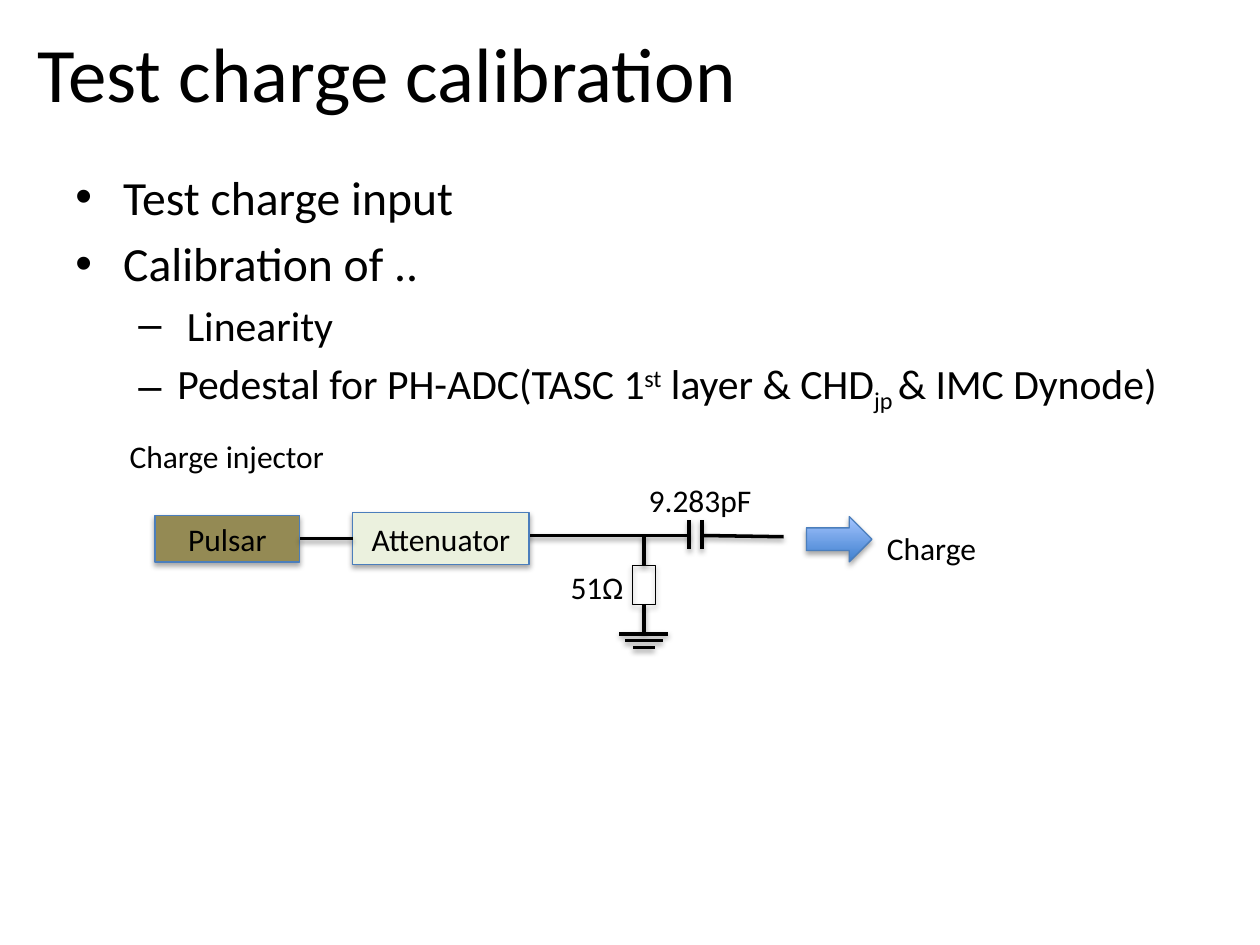
from lxml import etree
from pptx import Presentation
from pptx.dml.color import RGBColor
from pptx.enum.shapes import MSO_CONNECTOR, MSO_SHAPE as Shape
from pptx.enum.text import MSO_ANCHOR as Anchor, PP_ALIGN as Align
from pptx.oxml.ns import qn
from pptx.util import Inches, Pt

BLACK = RGBColor(0x00, 0x00, 0x00)
OLIVE = RGBColor(0x94, 0x8A, 0x54)
PALE_GREEN = RGBColor(0xEB, 0xF1, 0xDE)
EDGE_BLUE = RGBColor(0x4B, 0x7E, 0xBC)
DEEP_BLUE = RGBColor(0x3F, 0x80, 0xCE)
LIGHT_BLUE = RGBColor(0xA4, 0xC4, 0xFF)
FONT = "Calibri"
TOP, LEFT, BOTTOM, RIGHT = range(4)


def style_runs(p, size):
    for r in p.runs:
        r.font.name, r.font.size, r.font.color.rgb = FONT, Pt(size), BLACK


def add_text(shapes, text, x, y, w, h, size=18, anchor=Anchor.TOP):
    tf = shapes.add_textbox(Inches(x), Inches(y), Inches(w), Inches(h)).text_frame
    tf.word_wrap = True
    tf.vertical_anchor = anchor
    tf.text = text
    style_runs(tf.paragraphs[0], size)


def add_shadow(sp, alpha, distance):
    effects = etree.SubElement(sp._element.spPr, qn("a:effectLst"))
    shadow = etree.SubElement(effects, qn("a:outerShdw"), blurRad=str(Pt(3.1)),
                              dist=str(Pt(distance)), dir="5400000", rotWithShape="0")
    color = etree.SubElement(shadow, qn("a:srgbClr"), val=str(BLACK))
    etree.SubElement(color, qn("a:alpha"), val=str(alpha * 1000))


def add_part(shapes, kind, x, y, w, h, fill=None, edge=EDGE_BLUE, text=""):
    """Add a shadowed circuit part; a pair of fill colours makes a gradient."""
    sp = shapes.add_shape(kind, Inches(x), Inches(y), Inches(w), Inches(h))
    if fill is None:
        sp.fill.background()
    elif isinstance(fill, RGBColor):
        sp.fill.solid()
        sp.fill.fore_color.rgb = fill
    else:
        sp.fill.gradient()
        sp.fill.gradient_angle = 90
        for stop, color, position in zip(sp.fill.gradient_stops, fill, (0, 1)):
            stop.color.rgb, stop.position = color, position
    sp.line.color.rgb, sp.line.width = edge, Pt(0.75)
    add_shadow(sp, 35, 1.8)
    if text:
        tf = sp.text_frame
        tf.vertical_anchor = Anchor.MIDDLE
        tf.text = text
        tf.paragraphs[0].alignment = Align.CENTER
        style_runs(tf.paragraphs[0], 18)
    return sp


def add_wire(shapes, x1, y1, x2, y2):
    wire = shapes.add_connector(MSO_CONNECTOR.STRAIGHT, Inches(x1), Inches(y1),
                                Inches(x2), Inches(y2))
    wire.line.color.rgb, wire.line.width = BLACK, Pt(2)
    add_shadow(wire, 38, 1.6)
    return wire


def add_bullets(slide, x, y, w, h):
    tf = slide.shapes.add_textbox(Inches(x), Inches(y), Inches(w), Inches(h)).text_frame
    tf.word_wrap = True
    # Size, bullet, left margin and hanging indent of each level
    levels = ((27.2, "•", 0.38, 0.38), (23.8, "–", 0.81, 0.31))
    items = (
        (0, [("Test charge input", 0)]),
        (0, [("Calibration of ..", 0)]),
        (1, [(" Linearity", 0)]),
        (1, [("Pedestal for PH-ADC(TASC 1", 0), ("st", 30), (" layer & CHD", 0),
             ("jp ", -25), ("& IMC Dynode)", 0)]),
    )
    for i, (level, pieces) in enumerate(items):
        size, bullet, margin, hang = levels[level]
        p = tf.paragraphs[0] if i == 0 else tf.add_paragraph()
        p.level = level
        p.space_before = Pt(size * 0.2)
        for text, baseline in pieces:
            r = p.add_run()
            r.text = text
            if baseline:
                r.font._element.set("baseline", str(baseline * 1000))
        style_runs(p, size)
        pPr = p._p.get_or_add_pPr()
        pPr.set("marL", str(Inches(margin)))
        pPr.set("indent", str(-Inches(hang)))
        etree.SubElement(pPr, qn("a:buFont"), typeface="Arial")
        etree.SubElement(pPr, qn("a:buChar"), char=bullet)


def add_circuit(slide, x, y):
    """Draw the charge injector circuit with its top left corner at x, y."""
    shapes = slide.shapes.add_group_shape().shapes
    wire_y, node_x = y + 0.48, x + 3.88
    plates = x + 4.24, x + 4.34

    pulsar = add_part(shapes, Shape.RECTANGLE, x, y + 0.32, 1.15, 0.37, OLIVE,
                      text="Pulsar")
    add_wire(shapes, x + 2.94, wire_y, plates[0], wire_y)
    for plate_x in plates:
        add_wire(shapes, plate_x, y + 0.36, plate_x, y + 0.59)
    add_wire(shapes, x + 4.35, wire_y, x + 4.99, wire_y + 0.01)

    resistor = add_part(shapes, Shape.RECTANGLE, node_x - 0.09, y + 0.72, 0.18, 0.31,
                        edge=BLACK)
    add_wire(shapes, node_x, wire_y, node_x, y + 0.72).end_connect(resistor, TOP)
    add_wire(shapes, node_x, y + 1.03, node_x, y + 1.25).begin_connect(resistor, BOTTOM)
    for i, width in enumerate((0.39, 0.3, 0.17)):
        bar_y = y + 1.26 + 0.055 * i
        add_wire(shapes, node_x - width / 2, bar_y, node_x + width / 2, bar_y)

    add_part(shapes, Shape.RIGHT_ARROW, x + 5.17, y + 0.33, 0.52, 0.36,
             (DEEP_BLUE, LIGHT_BLUE))
    add_text(shapes, "9.283pF", x + 3.82, y, 1.26, 0.4)
    add_text(shapes, "51Ω", x + 3.2, y + 0.69, 0.84, 0.28)
    attenuator = add_part(shapes, Shape.RECTANGLE, x + 1.57, y + 0.3, 1.4, 0.41,
                          PALE_GREEN, text="Attenuator")
    link = add_wire(shapes, x + 1.15, y + 0.5, x + 1.57, y + 0.5)
    link.begin_connect(pulsar, RIGHT)
    link.end_connect(attenuator, LEFT)
    add_text(shapes, "Charge", x + 5.71, y + 0.38, 1.01, 0.28)


def main():
    prs = Presentation()
    prs.slide_width, prs.slide_height = Inches(10), Inches(7.5)
    slide = prs.slides.add_slide(prs.slide_layouts[6])
    add_text(slide.shapes, "Test charge calibration", 0.2, 0.14, 5.92, 0.85, 44,
             Anchor.MIDDLE)
    add_bullets(slide, 0.5, 1.28, 9, 2.14)
    add_text(slide.shapes, "Charge injector", 0.93, 3.42, 2.07, 0.4)
    add_circuit(slide, 1.23, 3.77)
    prs.save("out.pptx")


if __name__ == "__main__":
    main()
